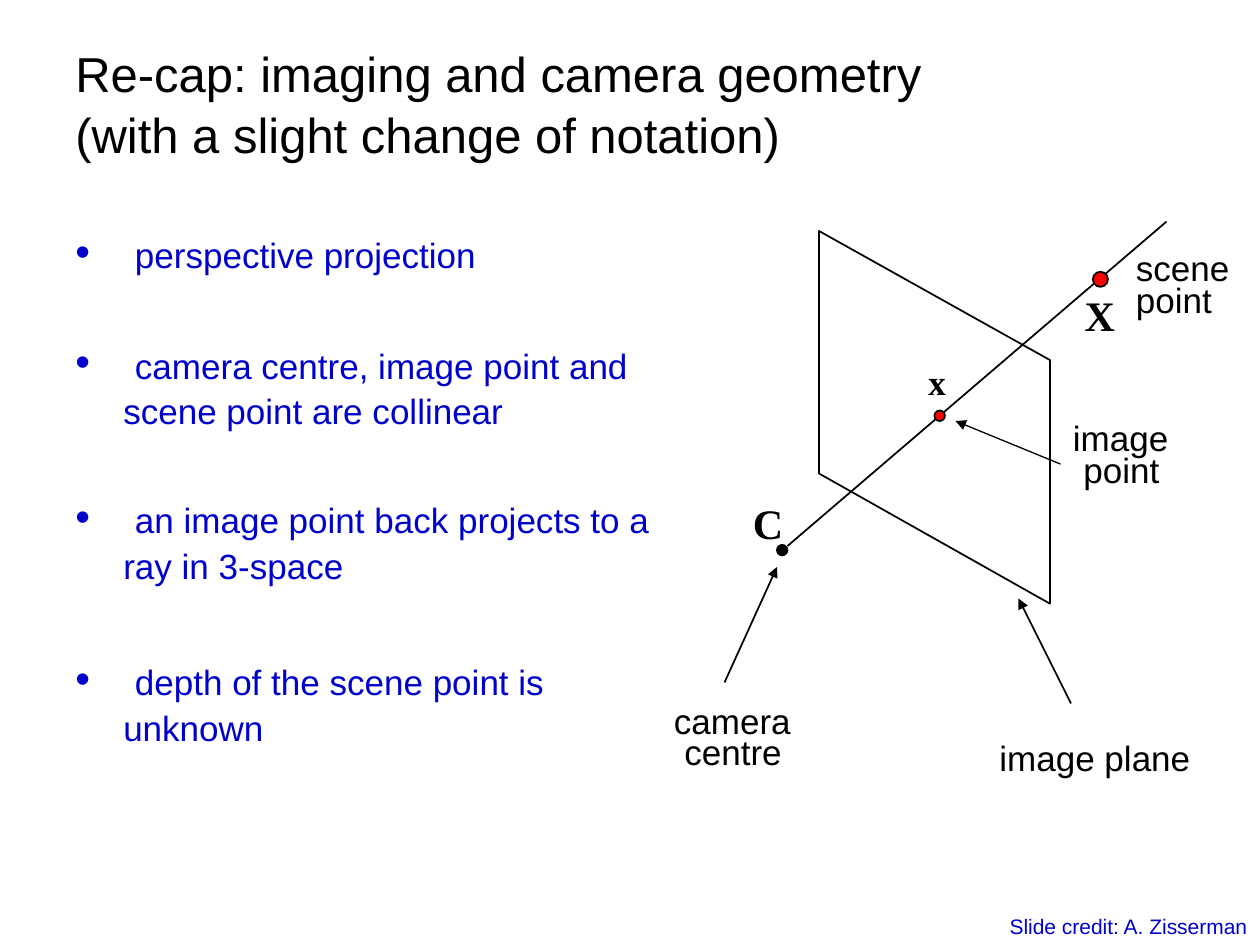
from dataclasses import dataclass

import pptx
import pptx.dml.color
import pptx.enum.shapes
import pptx.enum.text
import pptx.oxml.ns
import pptx.util
from lxml import etree

RGBColor = pptx.dml.color.RGBColor
ALIGN = pptx.enum.text.PP_ALIGN
ANCHOR = pptx.enum.text.MSO_ANCHOR
Inches = pptx.util.Inches
Pt = pptx.util.Pt
qn = pptx.oxml.ns.qn

BLACK = RGBColor(0x00, 0x00, 0x00)
BLUE = RGBColor(0x00, 0x00, 0xCC)
RED = RGBColor(0xFF, 0x00, 0x00)

SLIDE_WIDTH, SLIDE_HEIGHT = 10, 7.5
BULLET_INDENT = 0.38
DIAGRAM_COLUMNS, DIAGRAM_ROWS = 57, 54

# Text and the space above it in points
BULLETS = [
    ("perspective projection", 0),
    ("camera centre, image point and scene point are collinear", 33),
    ("an image point back projects to a ray in 3-space", 33),
    ("depth of the scene point is unknown", 37),
]

# Diagram parts, in columns and rows of its grid
RAY = ((12, 31), (48.1, 0.1))
IMAGE_PLANE = [(15, 1), (15, 24.1), (37, 36.5), (37, 13.3)]
POINTS = [  # centre, diameter, fill
    ((11.5, 31.4), 1, BLACK),
    ((26.5, 18.6), 1, RED),
    ((41.8, 5.6), 1.44, RED),
]
ARROWS = [  # start, tip, line width
    ((6, 44), (11, 33), 1),
    ((39, 46), (34, 36), 1),
    ((38, 23.2), (28, 19.1), 0.75),
]
LABELS = [  # text, corner, columns wide
    ("camera", (0, 45), 19),
    ("centre", (1, 48), 17),
    ("image plane", (31, 48.6), 25),
    ("image", (38, 18.1), 13),
    ("point", (39, 21.1), 13),
    ("scene", (44, 1.9), 13),
    ("point", (44, 4.9), 13),
]
SYMBOLS = [  # text, corner, text size
    ("C", (6.8, 25.8), 24),
    ("X", (38.4, 6), 24),
    ("x", (22.9, 12.7), 20),
]


@dataclass
class Box:
    left: float
    top: float
    width: float
    height: float

    def lengths(self):
        return [Inches(n) for n in (self.left, self.top, self.width, self.height)]

    def at(self, point):
        """Slide position of a point given in diagram columns and rows."""
        column, row = point
        return (Inches(self.left + column * self.width / DIAGRAM_COLUMNS),
                Inches(self.top + row * self.height / DIAGRAM_ROWS))

    def columns(self, count):
        return Inches(count * self.width / DIAGRAM_COLUMNS)


def format_run(run, size, color=BLACK, font="Arial", bold=False):
    run.font.size = Pt(size)
    run.font.name = font
    run.font.bold = bold
    run.font.color.rgb = color


def add_text(slide, lengths, text, size, align=ALIGN.LEFT, anchor=ANCHOR.TOP,
             line_spacing=None, **style):
    text_frame = slide.shapes.add_textbox(*lengths).text_frame
    text_frame.word_wrap = True
    text_frame.vertical_anchor = anchor
    text_frame.text = text
    for paragraph in text_frame.paragraphs:
        paragraph.alignment = align
        paragraph.line_spacing = line_spacing
        for run in paragraph.runs:
            format_run(run, size, **style)


def add_line(slide, start, end, width=1, arrow=False):
    connector = slide.shapes.add_connector(
        pptx.enum.shapes.MSO_CONNECTOR.STRAIGHT, *start, *end)
    connector.line.color.rgb = BLACK
    connector.line.width = Pt(width)
    if arrow:
        etree.SubElement(connector.line._get_or_add_ln(), qn("a:tailEnd"), type="triangle")
    etree.SubElement(connector._element.spPr, qn("a:effectLst"))


def outline(shape):
    shape.shadow.inherit = False
    shape.line.color.rgb = BLACK
    shape.line.width = Pt(1)


def add_title(slide, box):
    add_text(slide, box.lengths(),
             "Re-cap: imaging and camera geometry\v(with a slight change of notation)",
             28, anchor=ANCHOR.MIDDLE, line_spacing=1.05)


def add_bullets(slide, box):
    text_frame = slide.shapes.add_textbox(*box.lengths()).text_frame
    text_frame.word_wrap = True
    for index, (text, space) in enumerate(BULLETS):
        paragraph = text_frame.add_paragraph() if index else text_frame.paragraphs[0]
        paragraph.space_before = Pt(space)
        paragraph.line_spacing = 1.05
        for part, size in ((" ", 24), (text, 20)):
            run = paragraph.add_run()
            run.text = part
            format_run(run, size, BLUE)
        properties = paragraph._p.get_or_add_pPr()
        properties.set("marL", str(Inches(BULLET_INDENT)))
        properties.set("indent", str(-Inches(BULLET_INDENT)))
        etree.SubElement(properties, qn("a:buFont"), typeface="Arial")
        etree.SubElement(properties, qn("a:buChar"), char="•")


def add_camera_diagram(slide, box):
    add_line(slide, *map(box.at, RAY))

    corners = [box.at(corner) for corner in IMAGE_PLANE]
    builder = slide.shapes.build_freeform(*corners[0])
    builder.add_line_segments(corners[1:], close=True)
    plane = builder.convert_to_shape()
    plane.fill.background()
    outline(plane)

    for (column, row), diameter, fill in POINTS:
        corner = box.at((column - diameter / 2, row - diameter / 2))
        size = box.columns(diameter)
        dot = slide.shapes.add_shape(
            pptx.enum.shapes.MSO_SHAPE.OVAL, *corner, size, size)
        dot.fill.solid()
        dot.fill.fore_color.rgb = fill
        outline(dot)

    for start, tip, width in ARROWS:
        add_line(slide, box.at(start), box.at(tip), width, arrow=True)
    for text, corner, columns in LABELS:
        add_text(slide, (*box.at(corner), box.columns(columns), Inches(0.43)), text, 20)
    for text, corner, size in SYMBOLS:
        add_text(slide, (*box.at(corner), box.columns(6.7), Inches(0.5)), text, size,
                 align=ALIGN.CENTER, font="Times New Roman", bold=True)


def add_credit(slide, box):
    add_text(slide, box.lengths(), "Slide credit: A. Zisserman", 12,
             align=ALIGN.RIGHT, color=BLUE)


def main():
    presentation = pptx.Presentation()
    presentation.slide_width = Inches(SLIDE_WIDTH)
    presentation.slide_height = Inches(SLIDE_HEIGHT)
    slide = presentation.slides.add_slide(presentation.slide_layouts[6])
    add_title(slide, Box(0.5, 0.31, 9, 1))
    add_bullets(slide, Box(0.5, 1.73, 4.88, 5.6))
    add_camera_diagram(slide, Box(5.25, 1.75, 4.75, 4.5))
    add_credit(slide, Box(7.18, 7.2, 2.82, 0.3))
    presentation.save("out.pptx")


if __name__ == "__main__":
    main()
